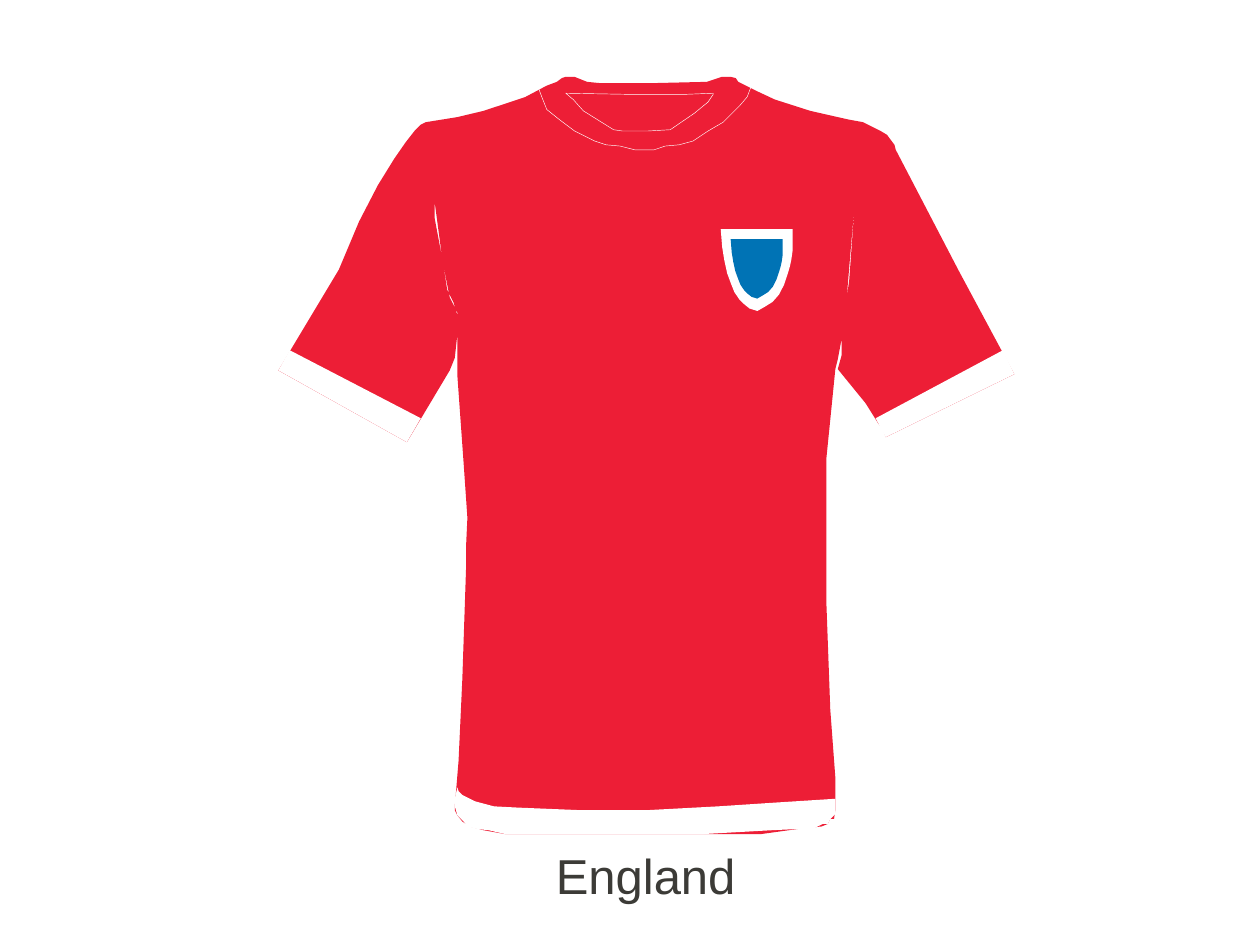
"""Build a slide that shows a football shirt with its country's name."""
from dataclasses import dataclass

from pptx import Presentation
from pptx import util as u
from pptx.dml.color import RGBColor
from pptx.enum import text

GRID = u.Cm(2.54) / 100

SHIRT = [
    (679, 154), (675, 201), (672, 237), (668, 264), (668, 269), (665, 285),
    (663, 293), (656, 363), (656, 386), (656, 481), (659, 563), (663, 617),
    (663, 643), (662, 650), (659, 650), (657, 654), (652, 656), (633, 658),
    (604, 662), (401, 662), (384, 659), (373, 656), (367, 652), (363, 647),
    (361, 643), (361, 640), (364, 604), (367, 539), (370, 450), (370, 433),
    (371, 411), (368, 367), (363, 297), (363, 248), (357, 236), (354, 221),
    (351, 205), (345, 160), (345, 173), (351, 205), (355, 230), (360, 240),
    (363, 250), (363, 266), (361, 284), (357, 294), (323, 351), (221, 294),
    (269, 214), (285, 176), (300, 147), (313, 126), (322, 113), (329, 104),
    (334, 99), (338, 97), (363, 93), (384, 88), (402, 82), (417, 77),
    (434, 68), (442, 65), (446, 62), (449, 61), (456, 61), (466, 65),
    (476, 66), (519, 66), (561, 65), (573, 61), (580, 61), (584, 62),
    (586, 65), (600, 72), (615, 79), (643, 88), (665, 93), (674, 95),
    (685, 97), (691, 100), (699, 104), (704, 107), (710, 115), (711, 119),
    (761, 215), (805, 297), (703, 347), (701, 341), (697, 336), (687, 320),
    (665, 293), (668, 282), (668, 264), (674, 223),
]
COLLAR = [
    (437, 59), (440, 58), (444, 56), (450, 56), (462, 59), (471, 61),
    (484, 61), (514, 61), (555, 59), (567, 56), (574, 56), (579, 58),
    (582, 59), (596, 69), (593, 77), (587, 84), (574, 97), (562, 104),
    (550, 112), (539, 115), (528, 116), (519, 119), (504, 119), (492, 116),
    (481, 115), (472, 112), (456, 104), (444, 95), (434, 87), (430, 77),
    (427, 69), (427, 66), (431, 62),
]
NECK = [
    (487, 103), (494, 104), (514, 104), (532, 103), (551, 90), (562, 81),
    (566, 75), (566, 74), (542, 75), (503, 75), (449, 74), (455, 79),
    (463, 88),
]
LEFT_CUFF = [(221, 294), (323, 351), (334, 332), (230, 278)]
RIGHT_CUFF = [(805, 297), (703, 347), (695, 332), (796, 278)]
HEM = [
    (363, 625), (361, 634), (361, 640), (363, 647), (368, 652), (371, 656),
    (379, 658), (388, 659), (401, 662), (558, 662), (612, 659), (633, 658),
    (645, 658), (653, 654), (657, 654), (659, 650), (663, 646), (663, 634),
    (616, 637), (570, 640), (514, 643), (460, 643), (411, 641), (392, 640),
    (377, 636), (367, 631), (364, 628),
]
SHIELD_PERCENT = [
    (0, 0), (100, 0), (100, 26), (98, 38), (96, 46), (93, 55), (88, 68),
    (81, 80), (72, 89), (61, 95), (51, 100), (40, 97), (33, 92), (26, 86),
    (19, 77), (14, 66), (9, 54), (5, 38), (2, 22),
]


@dataclass(frozen=True)
class Theme:
    """Colours and type of the slide."""
    red: str = "ED1E36"
    white: str = "FFFFFF"
    blue: str = "0073B5"
    ink: str = "3C3B37"
    font: str = "Arial"
    caption_size: int = 28
    seam_width: float = 0.25


def write(frame, words, *, font, size, color, align=text.PP_ALIGN.LEFT):
    """Put formatted words into a text frame."""
    frame.text = words
    paragraph = frame.paragraphs[0]
    paragraph.alignment = align
    style = paragraph.runs[0].font
    style.name, style.size = font, u.Pt(size)
    style.color.rgb = RGBColor.from_string(color)


class ShirtSlide:
    """Draw the parts of a shirt on one slide."""

    def __init__(self, deck, theme):
        self.theme = theme
        self.slide = deck.slides.add_slide(deck.slide_layouts[5])

    def outline(self, points, origin=(0, 0), scale=(GRID, GRID)):
        """Add a closed outline without fill or line."""
        builder = self.slide.shapes.build_freeform(*points[0], scale=scale)
        builder.add_line_segments(points[1:], close=True)
        part = builder.convert_to_shape(*origin)
        part.shadow.inherit = False
        part.fill.background()
        part.line.fill.background()
        return part

    def panel(self, points, color, **placing):
        """Add a filled piece of cloth."""
        part = self.outline(points, **placing)
        part.fill.solid()
        part.fill.fore_color.rgb = RGBColor.from_string(color)

    def seam(self, points):
        """Add a thin stitched line."""
        line = self.outline(points).line
        line.color.rgb = RGBColor.from_string(self.theme.white)
        line.width = u.Pt(self.theme.seam_width)

    def shield(self, left, top, width, height, color):
        """Add a shield that fills the given box in centimetres."""
        self.panel(SHIELD_PERCENT, color,
                   origin=(u.Cm(left), u.Cm(top)),
                   scale=(u.Cm(width) / 100, u.Cm(height) / 100))

    def caption(self, words, left, top, width, height):
        """Place the title as a caption in the given box in centimetres."""
        country = self.slide.shapes.title
        country.left, country.top = u.Cm(left), u.Cm(top)
        country.width, country.height = u.Cm(width), u.Cm(height)
        frame = country.text_frame
        frame.word_wrap = False
        frame.auto_size = text.MSO_AUTO_SIZE.SHAPE_TO_FIT_TEXT
        frame.vertical_anchor = text.MSO_ANCHOR.TOP
        write(frame, words, font=self.theme.font,
              size=self.theme.caption_size, color=self.theme.ink)


def main():
    """Build and save the deck."""
    theme = Theme()
    deck = Presentation()
    deck.slide_width, deck.slide_height = u.Cm(25.4), u.Cm(19.05)
    kit = ShirtSlide(deck, theme)
    kit.panel(SHIRT, theme.red)
    for stitching in (COLLAR, NECK):
        kit.seam(stitching)
    for trim in (LEFT_CUFF, RIGHT_CUFF, HEM):
        kit.panel(trim, theme.white)
    kit.caption("England", 10.95, 16.92, 4.14, 1.45)
    kit.shield(14.53, 4.62, 1.45, 1.65, theme.white)
    kit.shield(14.73, 4.82, 1.05, 1.2, theme.blue)
    deck.save("out.pptx")


if __name__ == "__main__":
    main()
